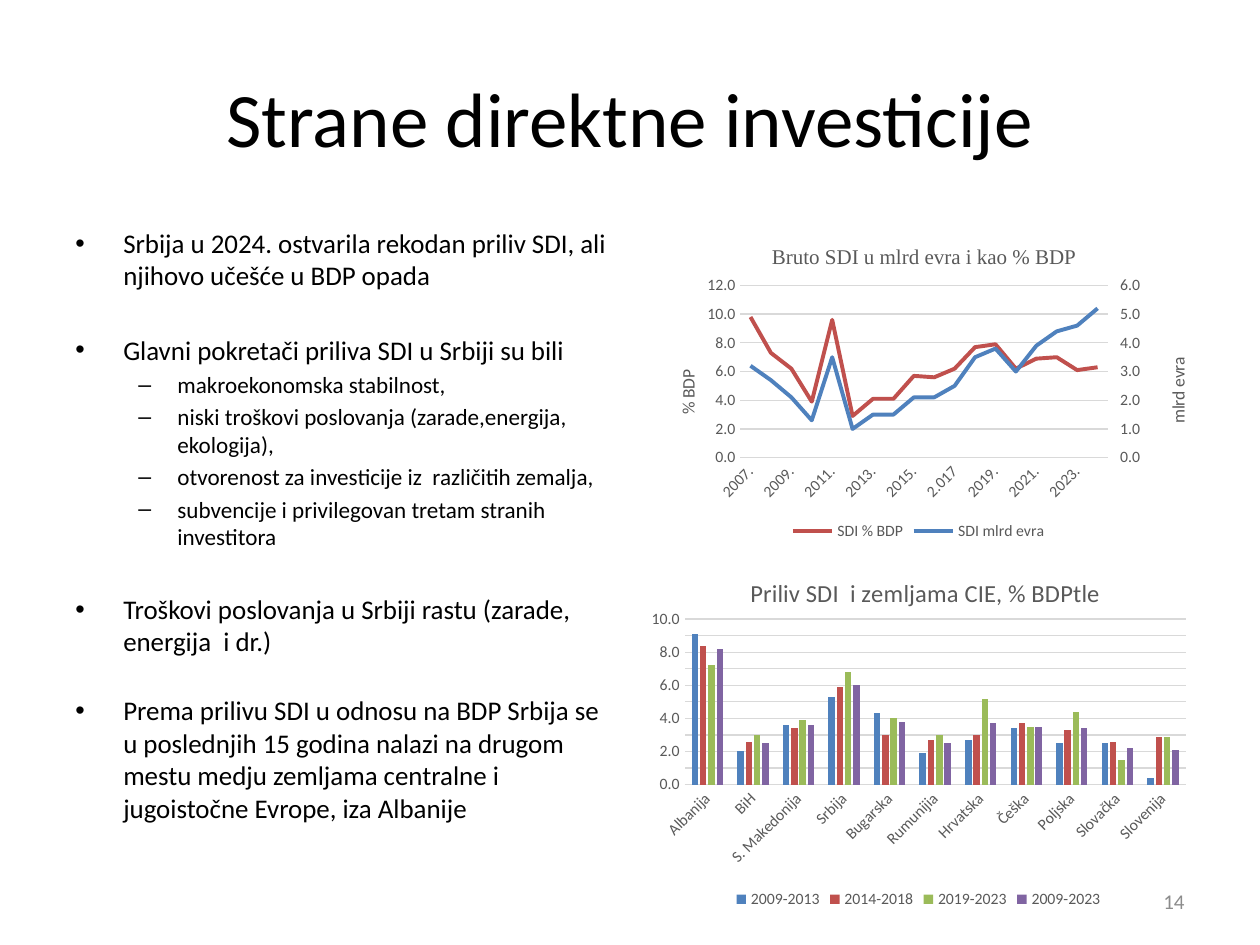
from copy import deepcopy

from lxml import etree
from pptx import Presentation
from pptx import util as u
from pptx.chart.data import CategoryChartData
from pptx.dml.color import RGBColor
from pptx.enum import chart as ch, text
from pptx.oxml.ns import qn

THEME = {
    "font": "Calibri", "serif": "Times New Roman",
    "ink": "000000", "muted": "595959", "number": "8C8C8C", "grid": "D9D9D9",
    "blue": "4F81BD", "red": "C0504D", "green": "9BBB59", "purple": "8064A2",
    "title": 44, "levels": (15.4, 13.2), "small": 12, "axis_title": 10, "label": 9,
}
TITLE = "Strane direktne investicije"
PAGE_NUMBER = "14"

# level, points of space above, wording
BULLETS = [
    (0, 0, "Srbija u 2024. ostvarila rekodan priliv SDI, ali njihovo učešće u BDP opada"),
    (0, 24, "Glavni pokretači priliva SDI u Srbiji su bili"),
    (1, 2.64, "makroekonomska stabilnost,"),
    (1, 2.64, "niski troškovi poslovanja (zarade,energija, ekologija),"),
    (1, 2.64, "otvorenost za investicije iz  različitih zemalja,"),
    (1, 2.64, "subvencije i privilegovan tretam stranih investitora"),
    (0, 24, "Troškovi poslovanja u Srbiji rastu (zarade, energija  i dr.)"),
    (0, 21, "Prema prilivu SDI u odnosu na BDP Srbija se u poslednjih 15 godina nalazi na "
            "drugom mestu medju zemljama centralne i jugoistočne Evrope, iza Albanije"),
]
# bullet, left margin, hanging indent
LEVELS = [("•", 0.38, 0.38), ("–", 0.81, 0.31)]

# Layout boxes are fractions of the chart frame.
FLOWS = {
    "title": "Bruto SDI u mlrd evra i kao % BDP", "title_font": ("serif", 12),
    "title_at": (0.23, 0.06), "plot_at": (0.18, 0.2, 0.66, 0.53),
    "kind": ch.XL_CHART_TYPE.LINE, "at": (5.08, 1.75, 4.42, 2.58),
    "max": 12, "format": "#,##0.0",
    "categories": ["2007.", "2008.", "2009.", "2010.", "2011.", "2012.", "2013.", "2014.", "2015.",
                   "2016.", "2.017", "2.018", "2019.", "2020.", "2021.", "2022.", "2023.", "2024."],
    "series": [
        ("SDI % BDP", "red", [9.8, 7.3, 6.2, 3.9, 9.6, 2.9, 4.1, 4.1, 5.7, 5.6, 6.2, 7.7,
                              7.9, 6.2, 6.9, 7, 6.1, 6.3]),
        ("SDI mlrd evra", "blue", [3.2, 2.7, 2.1, 1.3, 3.5, 1, 1.5, 1.5, 2.1, 2.1, 2.5, 3.5,
                                   3.8, 3, 3.9, 4.4, 4.6, 5.2]),
    ],
}
REGION = {
    "title": "Priliv SDI  i zemljama CIE, % BDPtle", "title_font": ("font", 14),
    "title_at": (0.19, 0.07), "plot_at": (0.08, 0.2, 0.9, 0.45),
    "kind": ch.XL_CHART_TYPE.COLUMN_CLUSTERED, "at": (5.08, 4.33, 4.42, 2.92),
    "max": 10, "format": "0.0",
    "categories": ["Albanija", "BiH", "S. Makedonija", "Srbija", "Bugarska", "Rumunijia",
                   "Hrvatska", "Češka", "Poljska", "Slovačka", "Slovenija"],
    "series": [
        ("2009-2013", "blue", [9.1, 2, 3.6, 5.3, 4.3, 1.9, 2.7, 3.4, 2.5, 2.5, 0.4]),
        ("2014-2018", "red", [8.4, 2.6, 3.4, 5.9, 3, 2.7, 3, 3.7, 3.3, 2.6, 2.9]),
        ("2019-2023", "green", [7.2, 3, 3.9, 6.8, 4, 3, 5.2, 3.5, 4.4, 1.5, 2.9]),
        ("2009-2023", "purple", [8.2, 2.5, 3.6, 6, 3.8, 2.5, 3.7, 3.5, 3.4, 2.2, 2.1]),
    ],
}


def color(name):
    return RGBColor.from_string(THEME[name])


def set_font(font, size, ink, face="font"):
    font.name, font.size, font.bold = THEME[face], u.Pt(size), False
    font.color.rgb = color(ink)


def add_text(page, at, wording, size, ink, align, anchor=text.MSO_ANCHOR.MIDDLE):
    frame = page.shapes.add_textbox(*map(u.Inches, at)).text_frame
    frame.word_wrap, frame.vertical_anchor = True, anchor
    frame.text = wording
    for para in frame.paragraphs:
        para.alignment = align
        set_font(para.runs[0].font, size, ink)
    return frame


def add_bullets(page):
    frame = add_text(page, (0.5, 1.75, 4.42, 4.95), "\n".join(b[2] for b in BULLETS),
                     THEME["levels"][0], "ink", text.PP_ALIGN.LEFT, text.MSO_ANCHOR.TOP)
    for para, (level, space, _) in zip(frame.paragraphs, BULLETS):
        bullet, margin, hang = LEVELS[level]
        para.level, para.space_before = level, u.Pt(space)
        para.runs[0].font.size = u.Pt(THEME["levels"][level])
        props = para._p.get_or_add_pPr()
        props.set("marL", str(u.Inches(margin)))
        props.set("indent", str(-u.Inches(hang)))
        etree.SubElement(props, qn("a:buFont")).set("typeface", "Arial")
        etree.SubElement(props, qn("a:buChar")).set("char", bullet)


def place(part, fractions, inner=False):
    """Pin a chart title or plot area to fractions of the chart frame."""
    for old in part.findall(qn("c:layout")):
        part.remove(old)
    layout = etree.Element(qn("c:layout"))
    manual = etree.SubElement(layout, qn("c:manualLayout"))
    values = [("layoutTarget", "inner")] if inner else []
    values += [("xMode", "edge"), ("yMode", "edge"), *zip("xywh", fractions)]
    for tag, value in values:
        etree.SubElement(manual, qn("c:" + tag)).set("val", str(value))
    part.insert(0 if inner else 1, layout)


def add_chart(page, content):
    data = CategoryChartData(number_format=content["format"])
    data.categories = content["categories"]
    for name, _, values in content["series"]:
        data.add_series(name, values)
    chart = page.shapes.add_chart(content["kind"], *map(u.Inches, content["at"]), data).chart
    set_font(chart.font, THEME["label"], "muted")
    chart.chart_title.text_frame.text = content["title"]
    face, size = content["title_font"]
    set_font(chart.chart_title.text_frame.paragraphs[0].runs[0].font, size, "muted", face)
    chart.has_legend = True
    chart.legend.position = ch.XL_LEGEND_POSITION.BOTTOM
    chart.legend.include_in_layout = False
    set_font(chart.legend.font, THEME["label"], "muted")
    chart.plots[0].vary_by_categories = False

    bottom, left = chart.category_axis, chart.value_axis
    for axis in (bottom, left):
        axis.major_tick_mark = axis.minor_tick_mark = ch.XL_TICK_MARK.NONE
        set_font(axis.tick_labels.font, THEME["label"], "muted")
    left.minimum_scale, left.maximum_scale, left.major_unit = 0, content["max"], 2
    left.tick_labels.number_format = content["format"]
    left.tick_labels.number_format_is_linked = False
    left.format.line.fill.background()
    for line in (bottom.format.line, left.major_gridlines.format.line):
        line.color.rgb, line.width = color("grid"), u.Pt(0.75)
    chart.element.xpath(".//c:catAx/c:txPr/a:bodyPr")[0].set("rot", "-2700000")
    place(chart.element.xpath("c:chart/c:title")[0], content["title_at"])
    place(chart.element.xpath(".//c:plotArea")[0], content["plot_at"], inner=True)
    return chart


def add_right_axis(chart, title, maximum, unit):
    """Move the last series to its own line plot on a second value axis."""
    area = chart.element.xpath(".//c:plotArea")[0]
    first, category, value = (area.find(qn("c:" + tag)) for tag in ("lineChart", "catAx", "valAx"))
    second, category2, value2 = map(deepcopy, (first, category, value))
    first.remove(first.findall(qn("c:ser"))[-1])
    for series in second.findall(qn("c:ser"))[:-1]:
        second.remove(series)
    first.addnext(second)
    value.addnext(value2)
    value2.addnext(category2)
    new_ids = {category.find(qn("c:axId")).get("val"): "50010",
               value.find(qn("c:axId")).get("val"): "50020"}
    for part in (second, category2, value2):
        for link in part.xpath("c:axId | c:crossAx"):
            link.set("val", new_ids[link.get("val")])
    category2.find(qn("c:delete")).set("val", "1")
    value2.remove(value2.find(qn("c:majorGridlines")))
    for tag, setting in (("axPos", "r"), ("majorTickMark", "out"), ("crosses", "max"),
                         ("majorUnit", unit), ("scaling/c:max", maximum)):
        value2.xpath("c:" + tag)[0].set("val", str(setting))
    value2.xpath("c:title//a:t")[0].text = title
    place(value2.find(qn("c:title")), (0.94, 0.41))


def add_flows_chart(page):
    chart = add_chart(page, FLOWS)
    for series, (_, ink, _) in zip(chart.plots[0].series, FLOWS["series"]):
        series.smooth = False
        series.format.line.color.rgb, series.format.line.width = color(ink), u.Pt(2.25)
    frame = chart.value_axis.axis_title.text_frame
    frame.text = "% BDP"
    set_font(frame.paragraphs[0].runs[0].font, THEME["axis_title"], "muted")
    title = chart.element.xpath(".//c:valAx/c:title")[0]
    title.xpath(".//a:bodyPr")[0].set("rot", "-5400000")
    place(title, (0.06, 0.45))
    skip = etree.Element(qn("c:tickLblSkip"))
    skip.set("val", "2")
    chart.element.xpath(".//c:catAx/c:noMultiLvlLbl")[0].addprevious(skip)
    add_right_axis(chart, "mlrd evra", 6, 1)


def add_region_chart(page):
    chart = add_chart(page, REGION)
    chart.plots[0].gap_width, chart.plots[0].overlap = 219, -27
    for series, (_, ink, _) in zip(chart.plots[0].series, REGION["series"]):
        series.format.fill.solid()
        series.format.fill.fore_color.rgb = color(ink)
    chart.value_axis.has_minor_gridlines, chart.value_axis.minor_unit = True, 1
    style = chart.element.xpath(".//c:majorGridlines/c:spPr")[0]
    chart.element.xpath(".//c:minorGridlines")[0].append(deepcopy(style))


deck = Presentation()
deck.slide_width, deck.slide_height = u.Inches(10), u.Inches(7.5)
page = deck.slides.add_slide(deck.slide_layouts[6])
add_text(page, (0.5, 0.3, 9, 1.25), TITLE, THEME["title"], "ink", text.PP_ALIGN.CENTER)
add_text(page, (7.17, 6.95, 2.33, 0.4), PAGE_NUMBER, THEME["small"], "number", text.PP_ALIGN.RIGHT)
add_flows_chart(page)
add_bullets(page)
add_region_chart(page)
deck.save("out.pptx")
